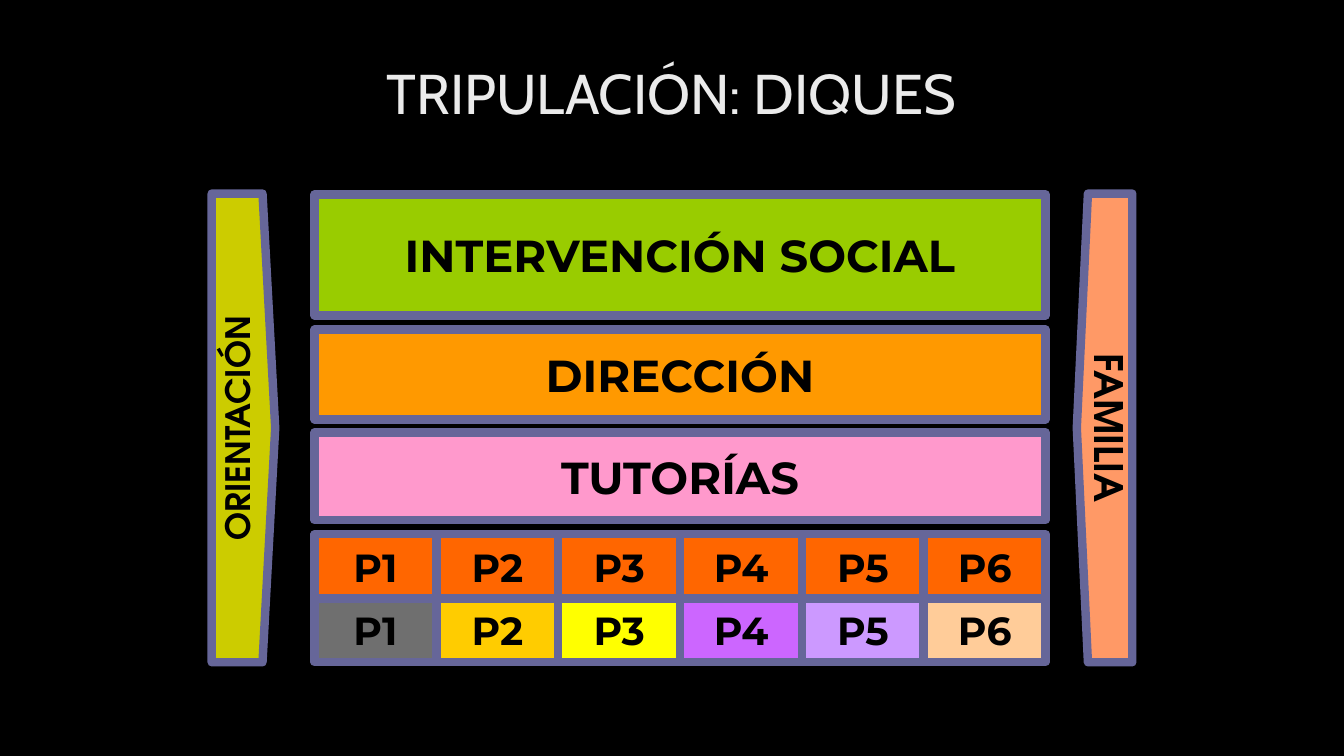
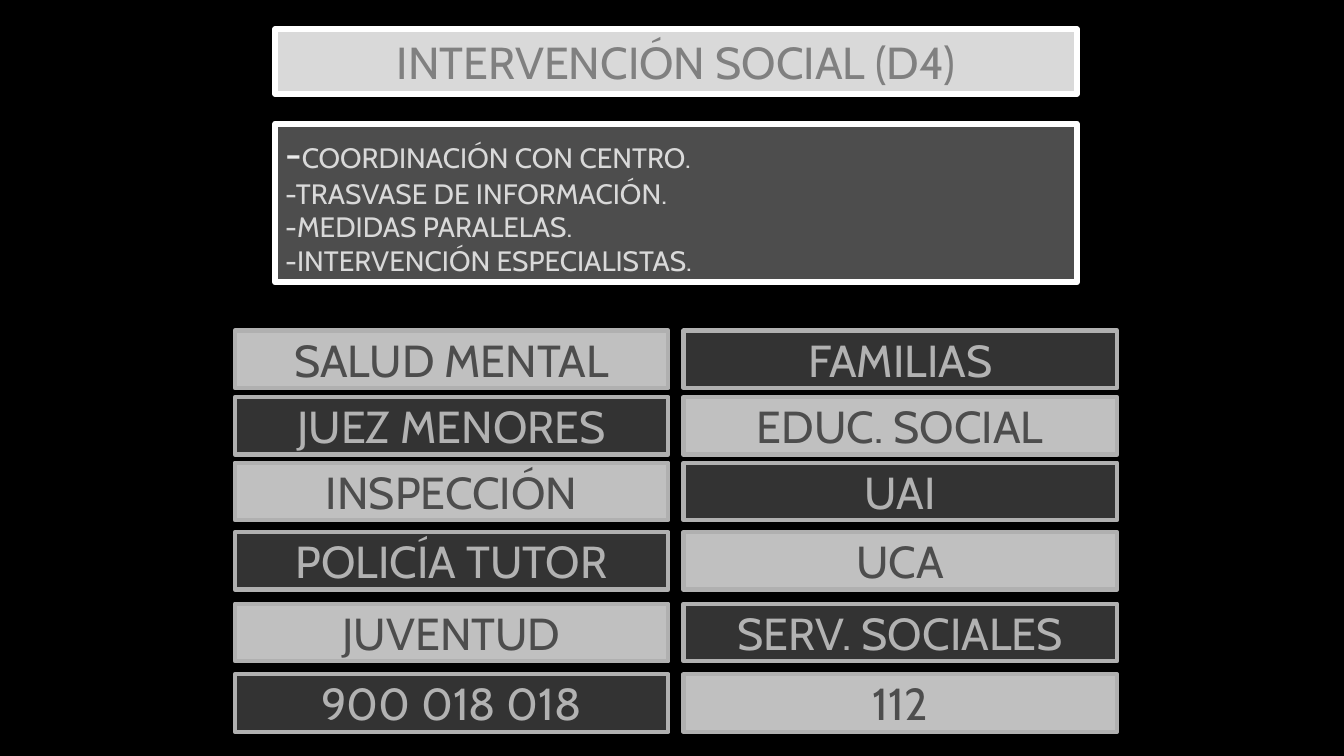
from pptx import Presentation
from pptx.dml.color import RGBColor
from pptx.enum.shapes import MSO_SHAPE
from pptx.enum.text import MSO_ANCHOR, PP_ALIGN
from pptx.util import Inches, Pt

RECT = MSO_SHAPE.RECTANGLE
ARROW = MSO_SHAPE.FLOWCHART_OFFPAGE_CONNECTOR
MIDDLE = MSO_ANCHOR.MIDDLE
LEFT, CENTER = PP_ALIGN.LEFT, PP_ALIGN.CENTER
SANS, HEAVY, ROUND = "Cabin", "Montserrat", "TeX Gyre Adventor"
BLACK, WHITE, PALE, SILVER = "000000", "FFFFFF", "EBEBEB", "D9D9D9"
DARK, ORANGE, FRAME, EDGE = "4D4D4D", "FF6600", "666699", "B0B0B0"


def rgb(code):
    return RGBColor.from_string(code)


def write(para, text, size=32, color=BLACK, font=SANS, bold=False, align=CENTER):
    para.alignment = align
    run = para.add_run()
    run.text = text
    run.font.size = Pt(size)
    run.font.name = font
    run.font.bold = bold
    run.font.color.rgb = rgb(color)


def panel(slide, place, fill, line, width, kind=RECT, turn=0):
    """Add a framed shape and return its text frame."""
    shape = slide.shapes.add_shape(kind, *map(Inches, place))
    shape.rotation = turn
    shape.shadow.inherit = False
    shape.fill.solid()
    shape.fill.fore_color.rgb = rgb(fill)
    shape.line.color.rgb = rgb(line)
    shape.line.width = Pt(width)
    frame = shape.text_frame
    frame.word_wrap = True
    frame.vertical_anchor = MIDDLE
    return frame


deck = Presentation()
deck.slide_width, deck.slide_height = Inches(13.33), Inches(7.5)
slides = []
for _ in range(2):
    slide = deck.slides.add_slide(deck.slide_layouts[6])
    slide.background.fill.solid()
    slide.background.fill.fore_color.rgb = rgb(BLACK)
    slides.append(slide)
crew, social = slides

# Slide 1: crew and dikes
title = crew.shapes.add_textbox(Inches(2.16), Inches(0.53), Inches(9), Inches(0.81))
title.text_frame.word_wrap = True
write(title.text_frame.paragraphs[0], "TRIPULACIÓN: DIQUES", size=40, color=PALE)

sides = [
    ("FAMILIA", (8.63, 3.97, 4.65, 0.55), "FF9966", 90, 28),
    ("ORIENTACIÓN", (0.09, 3.93, 4.65, 0.63), "CCCC00", 270, 24),
]
for text, place, fill, turn, size in sides:
    frame = panel(crew, place, fill, FRAME, 6, kind=ARROW, turn=turn)
    write(frame.paragraphs[0], text, size=size, font=ROUND, bold=True)

wall_x, wall_w = 3.12, 7.25
layers = [
    ("TUTORÍAS", 4.29, 0.87, "FF99CC"),
    ("DIRECCIÓN", 3.27, 0.89, "FF9900"),
    ("INTERVENCIÓN SOCIAL", 1.93, 1.2, "99CC00"),
]
for text, top, height, fill in layers:
    frame = panel(crew, (wall_x, top, wall_w, height), fill, FRAME, 6)
    write(frame.paragraphs[0], text, font=HEAVY, bold=True)

bricks = [
    (5.93, ["6F6F6F", "FFCC00", "FFFF00", "CC66FF", "CC99FF", "FFCC99"]),
    (5.3, [ORANGE] * 6),
]
brick_w = wall_w / 6
for top, fills in bricks:
    for col, fill in enumerate(fills):
        place = (wall_x + col * brick_w, top, brick_w, 0.64)
        frame = panel(crew, place, fill, FRAME, 6)
        write(frame.paragraphs[0], f"P{col + 1}", size=28, font=HEAVY, bold=True)

# Slide 2: social intervention
frame = panel(social, (2.73, 0.29, 7.95, 0.64), SILVER, WHITE, 4.5)
write(frame.paragraphs[0], "INTERVENCIÓN SOCIAL (D4)", color="808080")

frame = panel(social, (2.73, 1.23, 7.95, 1.57), DARK, WHITE, 4.5)
para = frame.paragraphs[0]
write(para, "-", size=28, color=PALE, align=LEFT)
write(para, "COORDINACIÓN CON CENTRO.", size=20, color=SILVER, align=LEFT)
tasks = ["-TRASVASE DE INFORMACIÓN.", "-MEDIDAS PARALELAS.", "-INTERVENCIÓN ESPECIALISTAS."]
for task in tasks:
    write(frame.add_paragraph(), task, size=20, color=SILVER, align=LEFT)

agents = [
    (3.28, "SALUD MENTAL", "FAMILIAS"),
    (3.94, "JUEZ MENORES", "EDUC. SOCIAL"),
    (4.59, "INSPECCIÓN", "UAI"),
    (5.28, "POLICÍA TUTOR", "UCA"),
    (5.99, "JUVENTUD", "SERV. SOCIALES"),
    (6.69, "900 018 018", "112"),
]
tones = [("C0C0C0", DARK), ("333333", "B2B2B2")]
for row, (top, *names) in enumerate(agents):
    for col, name in enumerate(names):
        fill, color = tones[(row + col) % 2]
        frame = panel(social, (2.33 + col * 4.45, top, 4.3, 0.57), fill, EDGE, 3)
        write(frame.paragraphs[0], name, color=color)

deck.save("out.pptx")
